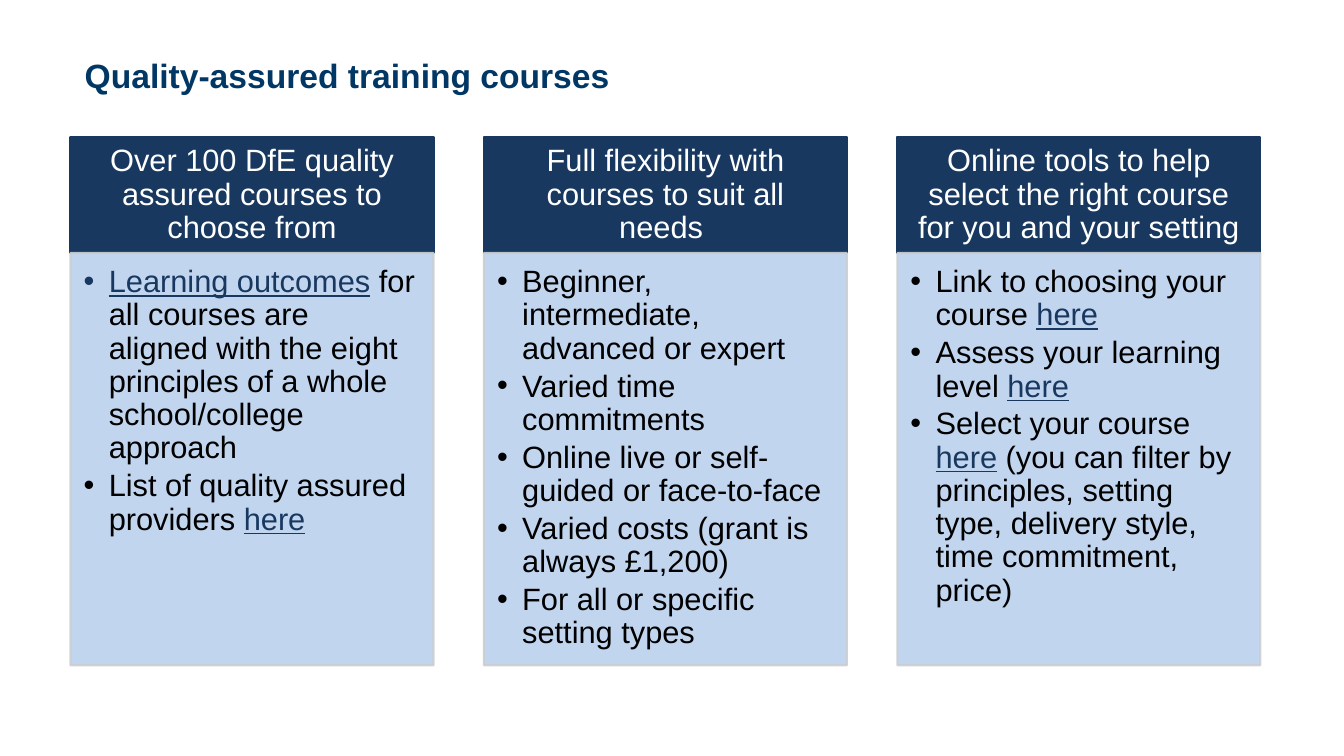
from lxml import etree
from pptx import Presentation
from pptx import util as u
from pptx.dml.color import RGBColor
from pptx.enum import shapes, text
from pptx.oxml.ns import qn

NAVY = RGBColor(0x18, 0x38, 0x60)
TITLE = RGBColor(0x00, 0x37, 0x64)
PALE = RGBColor(0xC1, 0xD5, 0xEF)
EDGE = RGBColor(0xCC, 0xCE, 0xD2)
WHITE = RGBColor(0xFF, 0xFF, 0xFF)
BLACK = RGBColor(0x00, 0x00, 0x00)

LEFT, STEP, WIDTH = 0.7, 4.1, 3.6
TOP, SPLIT, BASE = 1.36, 2.51, 6.6
SIZE = u.Pt(22)

# Text between bars is underlined.
COLUMNS = [
    ("Over 100 DfE quality assured courses to choose from", [
        "|Learning outcomes| for all courses are aligned with the eight "
        "principles of a whole school/college approach",
        "List of quality assured providers |here|",
    ]),
    ("Full flexibility with courses to suit all needs ", [
        "Beginner, intermediate, advanced or expert",
        "Varied time commitments",
        "Online live or self-guided or face-to-face",
        "Varied costs (grant is always £1,200)",
        "For all or specific setting types",
    ]),
    ("Online tools to help select the right course for you and your setting", [
        "Link to choosing your course |here|",
        "Assess your learning level |here|",
        "Select your course |here| (you can filter by principles, setting "
        "type, delivery style, time commitment, price)",
    ]),
]


def add_box(x, top, base, fill, edge, pads):
    """Draw one panel and return it with its text frame set up."""
    box = slide.shapes.add_shape(
        shapes.MSO_SHAPE.RECTANGLE,
        *[u.Inches(n) for n in (x, top, WIDTH, base - top)])
    box.shadow.inherit = False
    box.fill.solid()
    box.fill.fore_color.rgb = fill
    box.line.color.rgb = edge
    box.line.width = u.Pt(1.5)
    frame = box.text_frame
    frame.word_wrap = True
    (frame.margin_left, frame.margin_top,
     frame.margin_right, frame.margin_bottom) = map(u.Inches, pads)
    return box, frame


def add_bullet(para):
    props = para._p.get_or_add_pPr()
    props.set("marL", str(u.Inches(0.25)))
    props.set("indent", str(-u.Inches(0.25)))
    etree.SubElement(props, qn("a:buFont")).set("typeface", "Arial")
    etree.SubElement(props, qn("a:buChar")).set("char", "•")


deck = Presentation()
deck.slide_width, deck.slide_height = u.Inches(13.33), u.Inches(7.5)
slide = deck.slides.add_slide(deck.slide_layouts[5])

title = slide.shapes.title
title.left, title.top = u.Inches(0.84), u.Inches(0.59)
title.width, title.height = u.Inches(11.66), u.Inches(0.56)
frame = title.text_frame
frame.text = "Quality-assured training courses"
frame.auto_size = text.MSO_AUTO_SIZE.NONE
frame.vertical_anchor = text.MSO_ANCHOR.TOP
frame.margin_left = frame.margin_right = 0
frame.margin_top = frame.margin_bottom = 0
para = frame.paragraphs[0]
para.alignment = text.PP_ALIGN.LEFT
para.line_spacing = 0.9
font = para.runs[0].font
font.name, font.size, font.bold = "Arial", u.Pt(24), True
font.color.rgb = TITLE

for col, (head, points) in enumerate(COLUMNS):
    x = LEFT + col * STEP

    box, frame = add_box(x, TOP, SPLIT, NAVY, NAVY, (0.17, 0.1, 0.17, 0.1))
    frame.vertical_anchor = text.MSO_ANCHOR.MIDDLE
    frame.text = head
    para = frame.paragraphs[0]
    para.alignment = text.PP_ALIGN.CENTER
    para.line_spacing = 0.9
    font = para.runs[0].font
    font.name, font.size = "Arial", SIZE
    font.color.rgb = WHITE

    box, frame = add_box(x, SPLIT, BASE, PALE, EDGE, (0.13, 0.13, 0.17, 0.19))
    tint = box.line._ln.find(".//" + qn("a:srgbClr"))
    etree.SubElement(tint, qn("a:alpha")).set("val", "90000")
    frame.vertical_anchor = text.MSO_ANCHOR.TOP
    for row, point in enumerate(points):
        para = frame.add_paragraph() if row else frame.paragraphs[0]
        add_bullet(para)
        para.alignment = text.PP_ALIGN.LEFT
        para.line_spacing = 0.9
        para.space_after = u.Pt(3.3)
        for part, words in enumerate(point.split("|")):
            if not words:
                continue
            run = para.add_run()
            run.text = words
            link = part % 2 == 1
            run.font.name, run.font.size = "Arial", SIZE
            run.font.underline = link
            run.font.color.rgb = NAVY if link else BLACK

deck.save("out.pptx")
